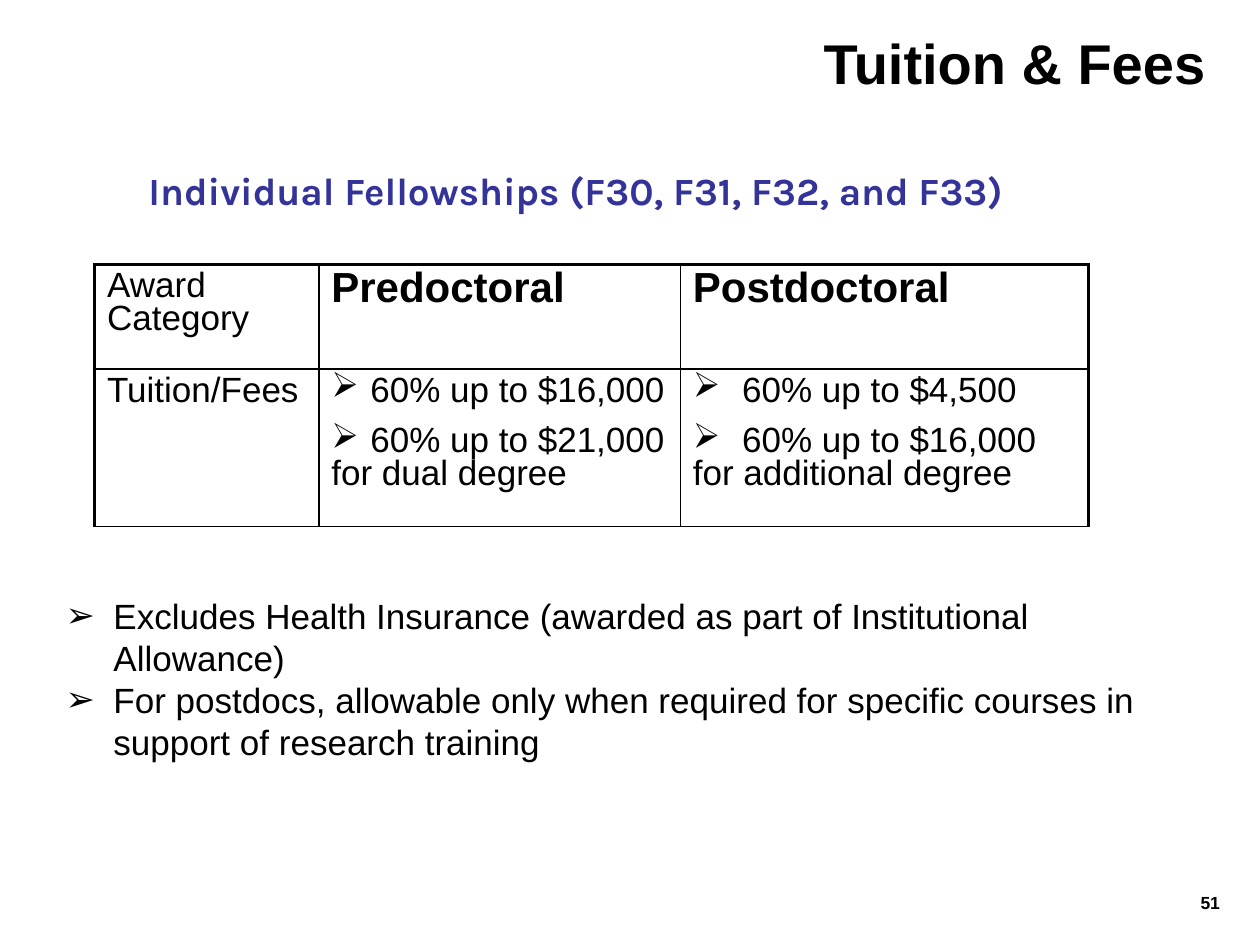
import pptx
import pptx.dml.color
import pptx.enum.text
import pptx.oxml
import pptx.oxml.ns
import pptx.util
from dataclasses import dataclass

Inches = pptx.util.Inches
Pt = pptx.util.Pt
ALIGN = pptx.enum.text.PP_ALIGN
ANCHOR = pptx.enum.text.MSO_ANCHOR


@dataclass(frozen=True)
class Theme:
    text_color: str = "000000"
    accent_color: str = "333399"
    background: str = "FFFFFF"
    font: str = "Arial"
    accent_font: str = "Karla"
    title_size: float = 32
    heading_size: float = 24
    subtitle_size: float = 22
    body_size: float = 20
    number_size: float = 10
    thick_line: float = 2.25
    thin_line: float = 1
    bullet: str = "➢"


THEME = Theme()


def add_xml(parent, tag, content="", **attributes):
    """Append one DrawingML element to parent."""
    values = " ".join(f'{name}="{value}"' for name, value in attributes.items())
    namespace = pptx.oxml.ns.nsdecls("a")
    parent.append(pptx.oxml.parse_xml(
        f"<a:{tag} {namespace} {values}>{content}</a:{tag}>"))


def write_text(frame, text, size=THEME.body_size, font=THEME.font,
               color=THEME.text_color, bold=False, align=ALIGN.LEFT,
               line_spacing=None, space_before=0, bullet=False,
               hanging=0, tab=None):
    """Write each line of text as one formatted paragraph."""
    for index, line in enumerate(text.split("\n")):
        paragraph = frame.paragraphs[0] if index == 0 else frame.add_paragraph()
        paragraph.text = line
        paragraph.alignment = align
        paragraph.space_before = Pt(space_before if index else 0)
        if line_spacing:
            paragraph.line_spacing = line_spacing
        if bullet:
            properties = paragraph._p.get_or_add_pPr()
            properties.set("marL", str(Inches(hanging)))
            properties.set("indent", str(-Inches(hanging)))
            add_xml(properties, "buChar", char=THEME.bullet)
            if tab:
                add_xml(properties, "tabLst",
                        f'<a:tab pos="{Inches(tab)}" algn="l"/>')
        paragraph.font.size = Pt(size)
        paragraph.font.bold = bold
        paragraph.font.name = font
        paragraph.font.color.rgb = pptx.dml.color.RGBColor.from_string(color)
        for run in paragraph.runs:
            run.font.name = font


class SlideBuilder:
    def __init__(self, presentation, theme):
        self.theme = theme
        self.slide = presentation.slides.add_slide(presentation.slide_layouts[1])
        fill = self.slide.background.fill
        fill.solid()
        fill.fore_color.rgb = pptx.dml.color.RGBColor.from_string(theme.background)

    def fill_placeholder(self, index, box, text, anchor, **text_format):
        shape = self.slide.placeholders[index]
        shape.left, shape.top, shape.width, shape.height = map(Inches, box)
        frame = shape.text_frame
        frame.auto_size = pptx.enum.text.MSO_AUTO_SIZE.NONE
        frame.vertical_anchor = anchor
        write_text(frame, text, **text_format)

    def add_text(self, box, text, **text_format):
        shape = self.slide.shapes.add_textbox(*map(Inches, box))
        shape.text_frame.word_wrap = True
        write_text(shape.text_frame, text, **text_format)

    def add_table(self, box, widths, heights, rows):
        """Rows hold (text, format) pairs; left, top and right edges are thick."""
        table = self.slide.shapes.add_table(
            len(heights), len(widths), *map(Inches, box)).table
        table.first_row = table.horz_banding = False
        for column, width in zip(table.columns, widths):
            column.width = Inches(width)
        for row, height in zip(table.rows, heights):
            row.height = Inches(height)
        for row_index, row in enumerate(rows):
            for column_index, (text, text_format) in enumerate(row):
                cell = table.cell(row_index, column_index)
                write_text(cell.text_frame, text, line_spacing=0.85,
                           space_before=10, **text_format)
                self.set_borders(cell, lnL=column_index == 0,
                                 lnR=column_index == len(widths) - 1,
                                 lnT=row_index == 0, lnB=False)
                cell.fill.background()

    def set_borders(self, cell, **thick_sides):
        properties = cell._tc.get_or_add_tcPr()
        line_fill = ('<a:solidFill><a:srgbClr val="'
                     f'{self.theme.text_color}"/></a:solidFill>')
        for side, thick in thick_sides.items():
            width = self.theme.thick_line if thick else self.theme.thin_line
            add_xml(properties, side, line_fill, w=Pt(width))


def main():
    presentation = pptx.Presentation()
    presentation.slide_width = Inches(10)
    presentation.slide_height = Inches(7.5)
    builder = SlideBuilder(presentation, THEME)

    # Title and subtitle
    builder.fill_placeholder(0, (1.49, 0.17, 8.18, 0.65), "Tuition & Fees",
                             ANCHOR.MIDDLE, size=THEME.title_size, bold=True,
                             align=ALIGN.RIGHT)
    builder.add_text((1.08, 1.28, 7.51, 0.47),
                     "Individual Fellowships (F30, F31, F32, and F33)",
                     size=THEME.subtitle_size, font=THEME.accent_font,
                     color=THEME.accent_color, bold=True)

    # Tuition table
    heading = {"size": THEME.heading_size, "bold": True}
    builder.add_table(
        (0.75, 2.1, 7.89, 2.08), (1.78, 2.87, 3.24), (0.83, 1.25),
        [[("Award\vCategory", {}), ("Predoctoral", heading),
          ("Postdoctoral", heading)],
         [("Tuition/Fees", {}),
          ("\t60% up to $16,000\n\t60% up to $21,000 for dual degree",
           {"bullet": True, "tab": 0.31}),
          ("\t60% up to $4,500\n\t60% up to $16,000 for additional degree",
           {"bullet": True, "tab": 0.39})]])

    # Notes on the rules
    builder.fill_placeholder(
        1, (0.42, 4.67, 9, 1.45),
        "Excludes Health Insurance (awarded as part of Institutional Allowance)\n"
        "For postdocs, allowable only when required for specific courses in "
        "support of research training",
        ANCHOR.TOP, bullet=True, hanging=0.38)

    # Page number
    builder.add_text((9.36, 7.03, 0.42, 0.33), "51", size=THEME.number_size,
                     bold=True, align=ALIGN.RIGHT)

    presentation.save("out.pptx")


if __name__ == "__main__":
    main()
